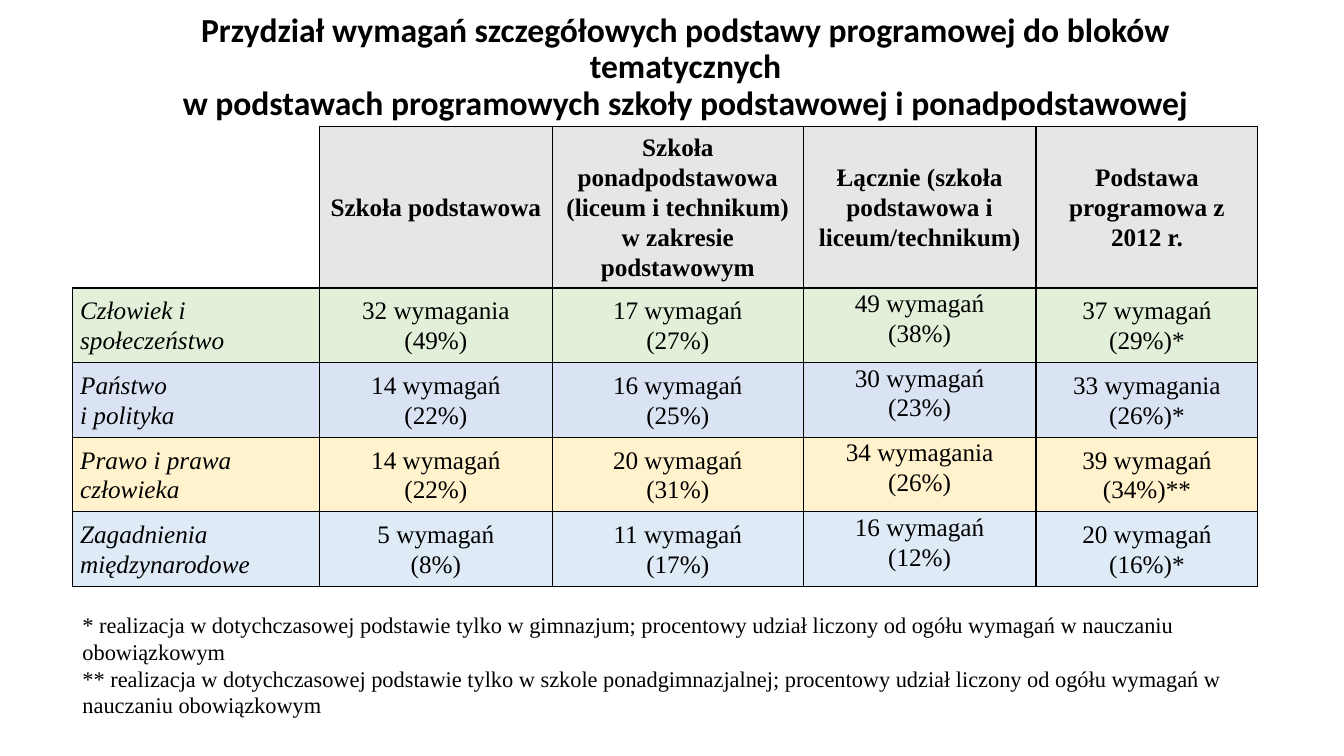
from lxml.etree import SubElement
from pptx import Presentation
from pptx.dml.color import RGBColor
from pptx.enum.text import MSO_ANCHOR, PP_ALIGN
from pptx.oxml.ns import qn
from pptx.util import Cm, Pt

BLACK = RGBColor(0x00, 0x00, 0x00)
GREY = RGBColor(0xE7, 0xE6, 0xE6)
GREEN = RGBColor(0xE2, 0xF0, 0xD9)
BLUE = RGBColor(0xDA, 0xE3, 0xF3)
YELLOW = RGBColor(0xFF, 0xF2, 0xCC)
LIGHT_BLUE = RGBColor(0xDE, 0xEB, 0xF7)

SERIF = "Times New Roman"
TITLE = ("Przydział wymagań szczegółowych podstawy programowej do bloków tematycznych\v"
         "w podstawach programowych szkoły podstawowej i ponadpodstawowej")
HEADERS = ["", "Szkoła podstawowa",
           "Szkoła ponadpodstawowa\n(liceum i technikum) w zakresie podstawowym",
           "Łącznie (szkoła podstawowa i liceum/technikum)",
           "Podstawa programowa z 2012 r."]
BLOCKS = [
    (GREEN, ["Człowiek i społeczeństwo", "32 wymagania\n(49%)", "17 wymagań\n(27%)",
             "49 wymagań\n(38%)", "37 wymagań (29%)*"]),
    (BLUE, ["Państwo\ni polityka", "14 wymagań\n(22%)", "16 wymagań\n(25%)",
            "30 wymagań\n(23%)", "33 wymagania (26%)*"]),
    (YELLOW, ["Prawo i prawa człowieka", "14 wymagań\n(22%)", "20 wymagań\n(31%)",
              "34 wymagania\n(26%)", "39 wymagań (34%)**"]),
    (LIGHT_BLUE, ["Zagadnienia międzynarodowe", "5 wymagań\n(8%)", "11 wymagań\n(17%)",
                  "16 wymagań\n(12%)", "20 wymagań\n(16%)*"]),
]
FOOTNOTES = ("* realizacja w dotychczasowej podstawie tylko w gimnazjum; "
             "procentowy udział liczony od ogółu wymagań w nauczaniu obowiązkowym\n"
             "** realizacja w dotychczasowej podstawie tylko w szkole ponadgimnazjalnej; "
             "procentowy udział liczony od ogółu wymagań w nauczaniu obowiązkowym")
COLUMN_WIDTHS = [6.22, 5.87, 6.32, 5.87, 5.59]
HEADER_HEIGHT, BLOCK_HEIGHT = 3.77, 1.88
TOTAL_COLUMN = 3


def write_text(tf, text, font, size, align=PP_ALIGN.LEFT, spacing=1.0, bold=False, italic=False):
    tf.text = text
    for p in tf.paragraphs:
        p.alignment = align
        p.line_spacing = spacing
        for r in p.runs:
            r.font.name = font
            r.font.size = Pt(size)
            r.font.bold = bold
            r.font.italic = italic
            r.font.color.rgb = BLACK


def add_text(s, left, top, width, height, anchor, *args, **kwargs):
    tf = s.shapes.add_textbox(Cm(left), Cm(top), Cm(width), Cm(height)).text_frame
    tf.word_wrap = True
    tf.vertical_anchor = anchor
    write_text(tf, *args, **kwargs)


def set_borders(cell, visible):
    tc_pr = cell._tc.get_or_add_tcPr()
    for side in "LRTB":
        ln = SubElement(tc_pr, qn(f"a:ln{side}"), w=str(Pt(1)))
        if side in visible:
            fill = SubElement(ln, qn("a:solidFill"))
            SubElement(fill, qn("a:srgbClr"), val=str(BLACK))
        else:
            SubElement(ln, qn("a:noFill"))


def fill_cell(cell, text, color, **kwargs):
    cell.margin_left = cell.margin_right = Cm(0.19)
    cell.margin_top = cell.margin_bottom = 0
    set_borders(cell, "LRTB" if text else "RB")
    if text:
        cell.fill.solid()
        cell.fill.fore_color.rgb = color
    else:
        cell.fill.background()
    write_text(cell.text_frame, text, SERIF, 18, spacing=1.07, **kwargs)


def add_requirements_table(s, left, top):
    rows = [(GREY, HEADERS)] + BLOCKS
    height = HEADER_HEIGHT + BLOCK_HEIGHT * len(BLOCKS)
    table = s.shapes.add_table(len(rows), len(HEADERS), Cm(left), Cm(top),
                               Cm(sum(COLUMN_WIDTHS)), Cm(height)).table
    table.first_row = table.horz_banding = False
    for column, width in zip(table.columns, COLUMN_WIDTHS):
        column.width = Cm(width)
    for i, (color, texts) in enumerate(rows):
        is_header = i == 0
        table.rows[i].height = Cm(HEADER_HEIGHT if is_header else BLOCK_HEIGHT)
        for j, text in enumerate(texts):
            cell = table.cell(i, j)
            at_top = j == TOTAL_COLUMN and not is_header
            cell.vertical_anchor = MSO_ANCHOR.TOP if at_top else MSO_ANCHOR.MIDDLE
            fill_cell(cell, text, color, bold=is_header, italic=j == 0,
                      align=PP_ALIGN.CENTER if j else PP_ALIGN.LEFT)


def main():
    prs = Presentation()
    prs.slide_width, prs.slide_height = Cm(33.87), Cm(19.05)
    s = prs.slides.add_slide(prs.slide_layouts[6])
    add_text(s, 2.67, 0.28, 29.21, 2.87, MSO_ANCHOR.MIDDLE, TITLE, "Calibri", 24,
             align=PP_ALIGN.CENTER, spacing=0.9, bold=True)
    add_requirements_table(s, 1.83, 3.18)
    add_text(s, 1.83, 15.27, 29.49, 3, MSO_ANCHOR.TOP, FOOTNOTES, SERIF, 16)
    prs.save("out.pptx")


if __name__ == "__main__":
    main()
